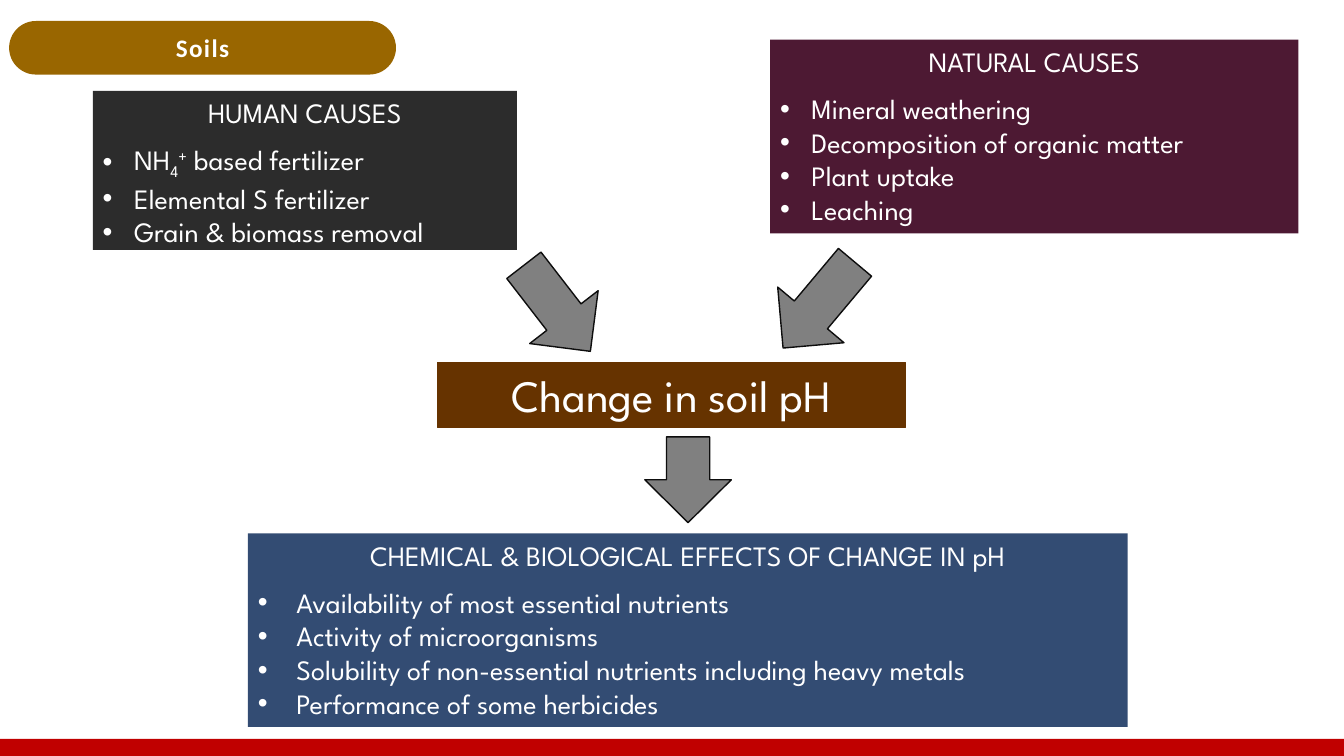
from lxml.etree import SubElement
from pptx import Presentation
from pptx.dml.color import RGBColor
from pptx.enum.shapes import MSO_SHAPE as Preset
from pptx.enum.text import MSO_ANCHOR as Anchor, PP_ALIGN as Align
from pptx.oxml.ns import qn
from pptx.util import Cm, Pt

SLIDE_WIDTH, SLIDE_HEIGHT = 33.87, 19.05
SUBSCRIPT, SUPERSCRIPT = -25, 30


def color(hex_code):
    return RGBColor.from_string(hex_code)


def add_block(page, preset, box, fill, line=None, line_width=1):
    """Add a filled shape; box is left, top, width, height in cm."""
    block = page.shapes.add_shape(preset, *(Cm(length) for length in box))
    block.shadow.inherit = False
    block.fill.solid()
    block.fill.fore_color.rgb = color(fill)
    if line:
        block.line.color.rgb = color(line)
        block.line.width = Pt(line_width)
    else:
        block.line.fill.background()
    block.text_frame.word_wrap = True
    block.text_frame.vertical_anchor = Anchor.TOP
    return block


def add_span(para, text, size=20, font="League Spartan", bold=False,
             baseline=0, tracking=0):
    span = para.add_run()
    span.text = text
    span.font.size = Pt(size)
    span.font.name = font
    span.font.bold = bold
    span.font.color.rgb = color("FFFFFF")
    properties = span.font._element
    if baseline:
        properties.set("baseline", str(baseline * 1000))
    if tracking:
        properties.set("spc", str(tracking * 100))


def add_bullet(para, indent):
    properties = para._p.get_or_add_pPr()
    properties.set("marL", str(Cm(indent)))
    properties.set("indent", str(-Cm(indent)))
    SubElement(properties, qn("a:buFont"), typeface="Arial")
    SubElement(properties, qn("a:buChar"), char="•")


def add_label(page, preset, box, fill, text, line=None, line_width=1,
              anchor=Anchor.TOP, **text_format):
    """Add a shape with one centred line of text."""
    block = add_block(page, preset, box, fill, line, line_width)
    block.text_frame.vertical_anchor = anchor
    para = block.text_frame.paragraphs[0]
    para.alignment = Align.CENTER
    add_span(para, text, **text_format)
    return block


def add_panel(page, box, fill, heading, items, indent=0.79):
    """Add a headed list; an item is a text or a list of (text, baseline)."""
    frame = add_label(page, Preset.RECTANGLE, box, fill, heading).text_frame
    frame.paragraphs[0].space_after = Pt(9.6)
    for item in items:
        para = frame.add_paragraph()
        para.alignment = Align.LEFT
        add_bullet(para, indent)
        parts = [(item, 0)] if isinstance(item, str) else item
        for text, baseline in parts:
            add_span(para, text, baseline=baseline)


def add_arrow(page, box, rotation):
    arrow = add_block(page, Preset.RIGHT_ARROW, box, "808080", "0D0D0D")
    arrow.rotation = rotation


def add_frame(page):
    """Add the bottom bar and the topic pill."""
    bar_height = 0.43
    add_block(page, Preset.RECTANGLE,
              (0, SLIDE_HEIGHT - bar_height, SLIDE_WIDTH, bar_height), "C00000")
    pill = add_label(page, Preset.ROUNDED_RECTANGLE, (0.23, 0.53, 9.75, 1.35),
                     "996600", "Soils", anchor=Anchor.MIDDLE, size=18,
                     font="Calibri", bold=True, tracking=1)
    pill.adjustments[0] = 0.5


def add_causes(page):
    add_panel(page, (19.41, 1, 13.31, 4.88), "4D1933", "NATURAL CAUSES",
              ["Mineral weathering", "Decomposition of organic matter",
               "Plant uptake", "Leaching"])
    ammonium = [("NH", 0), ("4", SUBSCRIPT), ("+", SUPERSCRIPT),
                (" based fertilizer", 0)]
    add_panel(page, (2.34, 2.29, 10.69, 4.01), "2C2C2C", "HUMAN CAUSES",
              [ammonium, "Elemental S fertilizer", "Grain & biomass removal"])
    add_arrow(page, (19.23, 6.6, 2.82, 2.18), 130)
    add_arrow(page, (12.67, 6.68, 2.74, 2.18), 52.3)


def add_effects(page):
    add_label(page, Preset.RECTANGLE, (11.02, 9.14, 11.81, 1.63), "663300",
              "Change in soil pH", line="663300", line_width=0.75, size=32)
    add_arrow(page, (16.26, 11, 2.16, 2.18), 90)
    add_panel(page, (6.25, 13.44, 22.17, 4.88), "334C73",
              "CHEMICAL & BIOLOGICAL EFFECTS OF CHANGE IN pH",
              ["Availability of most essential nutrients",
               "Activity of microorganisms",
               "Solubility of non-essential nutrients including heavy metals",
               "Performance of some herbicides"], indent=0.97)


def main():
    deck = Presentation()
    deck.slide_width, deck.slide_height = Cm(SLIDE_WIDTH), Cm(SLIDE_HEIGHT)
    page = deck.slides.add_slide(deck.slide_layouts[6])
    add_frame(page)
    add_causes(page)
    add_effects(page)
    deck.save("out.pptx")


if __name__ == "__main__":
    main()
